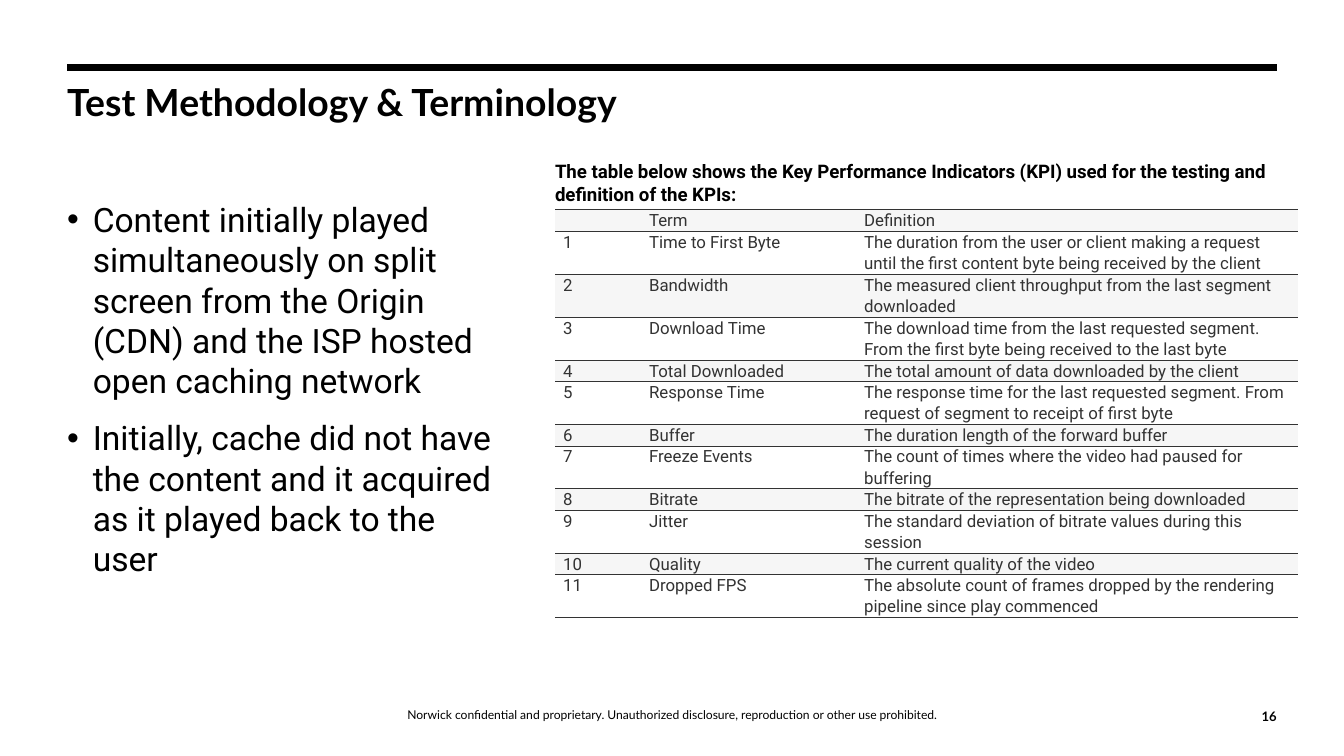
from lxml import etree
from pptx import Presentation, util as u
from pptx.dml.color import RGBColor
from pptx.enum import shapes, text
from pptx.oxml import ns

COLORS = {"ink": "000000", "cell": "333333", "band": "F6F6F6"}
BULLETS = [
    "Content initially played simultaneously on split screen from the Origin (CDN) "
    "and the ISP hosted open caching network",
    "Initially, cache did not have the content and it acquired as it played back to the user",
]
TERMS = [
    ("Time to First Byte", "The duration from the user or client making a request until "
     "the first content byte being received by the client"),
    ("Bandwidth", "The measured client throughput from the last segment downloaded"),
    ("Download Time", "The download time from the last requested segment. "
     "From the first byte being received to the last byte"),
    ("Total Downloaded", "The total amount of data downloaded by the client"),
    ("Response Time", "The response time for the last requested segment. "
     "From request of segment to receipt of first byte"),
    ("Buffer", "The duration length of the forward buffer"),
    ("Freeze Events", "The count of times where the video had paused for buffering"),
    ("Bitrate", "The bitrate of the representation being downloaded"),
    ("Jitter", "The standard deviation of bitrate values during this session"),
    ("Quality", "The current quality of the video"),
    ("Dropped FPS", "The absolute count of frames dropped by the rendering pipeline "
     "since play commenced"),
]


class Deck:
    """Holds the style and the current slide, with a method for each kind of element."""

    heading, body = "Lato", "Roboto"

    def __init__(self, width):
        self.prs = Presentation()
        self.prs.slide_width, self.prs.slide_height = u.Inches(width), u.Inches(width * 9 / 16)
        self.s = self.prs.slides.add_slide(self.prs.slide_layouts[1])

    def color(self, key):
        return RGBColor.from_string(COLORS[key])

    def style(self, p, font, size, bold=False, color="ink"):
        for r in p.runs:
            r.font.name, r.font.size, r.font.bold = font, u.Pt(size), bold
            r.font.color.rgb = self.color(color)

    def frame(self, sp, box, anchor=text.MSO_ANCHOR.TOP):
        sp.left, sp.top, sp.width, sp.height = map(u.Inches, box)
        tf = sp.text_frame
        tf.word_wrap, tf.auto_size = True, text.MSO_AUTO_SIZE.NONE
        tf.vertical_anchor = anchor
        tf.margin_left = tf.margin_top = tf.margin_right = tf.margin_bottom = 0
        return tf

    def title(self, box, words):
        tf = self.frame(self.s.shapes.title, box)
        tf.text = words
        p = tf.paragraphs[0]
        p.alignment, p.line_spacing = text.PP_ALIGN.LEFT, 0.8
        self.style(p, self.heading, 20, True)

    def bullets(self, box, items):
        tf = self.frame(self.s.placeholders[1], box)
        tf.text = "\n".join(items)
        for i, p in enumerate(tf.paragraphs):
            pPr = p._p.get_or_add_pPr()
            pPr.set("marL", str(u.Inches(0.19)))
            pPr.set("indent", str(-u.Inches(0.19)))
            etree.SubElement(pPr, ns.qn("a:buChar"), char="•")
            p.space_before = u.Pt(9 if i else 0)
            self.style(p, self.body, 18)

    def label(self, box, words, font, size, bold=False, align=text.PP_ALIGN.LEFT,
              anchor=text.MSO_ANCHOR.TOP, spacing=None):
        tf = self.frame(self.s.shapes.add_textbox(0, 0, 0, 0), box, anchor)
        tf.text = words
        p = tf.paragraphs[0]
        p.alignment, p.line_spacing = align, spacing
        self.style(p, font, size, bold)

    def rule(self, left, right, y, width):
        ends = map(u.Inches, (left, y, right, y))
        sp = self.s.shapes.add_connector(shapes.MSO_CONNECTOR.STRAIGHT, *ends)
        sp.line.color.rgb, sp.line.width = self.color("ink"), u.Pt(width)
        etree.SubElement(sp._element.spPr, ns.qn("a:effectLst"))

    def borders(self, cell):
        tcPr = cell._tc.get_or_add_tcPr()
        for side in ("lnL", "lnR"):
            ln = etree.SubElement(tcPr, ns.qn(f"a:{side}"))
            etree.SubElement(ln, ns.qn("a:noFill"))
        for side in ("lnT", "lnB"):
            ln = etree.SubElement(tcPr, ns.qn(f"a:{side}"), w=str(u.Pt(0.5)))
            fill = etree.SubElement(ln, ns.qn("a:solidFill"))
            etree.SubElement(fill, ns.qn("a:srgbClr"), val=COLORS["cell"])

    def cell(self, cell, words, banded):
        cell.margin_left = cell.margin_right = u.Inches(0.06)
        cell.margin_top = cell.margin_bottom = 0
        self.borders(cell)
        if banded:
            cell.fill.solid()
            cell.fill.fore_color.rgb = self.color("band")
        else:
            cell.fill.background()
        cell.text = words
        p = cell.text_frame.paragraphs[0]
        p.line_spacing, p.space_after = 1.07, u.Pt(8)
        self.style(p, self.body, 9, color="cell")
        if not words:
            p._p.get_or_add_endParaRPr().set("sz", "900")

    def table(self, left, top, widths, rows):
        heights = [0.32 if len(row[-1]) > 52 else 0.16 for row in rows]
        box = map(u.Inches, (left, top, sum(widths), sum(heights)))
        tbl = self.s.shapes.add_table(len(rows), len(widths), *box).table
        tbl.first_row = tbl.horz_banding = False
        for col, width in zip(tbl.columns, widths):
            col.width = u.Inches(width)
        for i, (row, height) in enumerate(zip(rows, heights)):
            tbl.rows[i].height = u.Inches(height)
            for j, words in enumerate(row):
                self.cell(tbl.cell(i, j), words, i % 2 == 0)


def main():
    deck = Deck(10)
    bottom = text.MSO_ANCHOR.BOTTOM
    deck.label((1.11, 5.04, 7.79, 0.33),
               "Norwick confidential and proprietary. Unauthorized disclosure, "
               "reproduction or other use prohibited.",
               deck.heading, 6.5, align=text.PP_ALIGN.CENTER, anchor=bottom, spacing=u.Pt(7.4))
    deck.rule(0.5, 9.5, 0.5, 3.75)
    deck.bullets((0.5, 1.48, 3.26, 3.38), BULLETS)
    deck.label((9.25, 5.14, 0.25, 0.25), "16", deck.heading, 7, True,
               text.PP_ALIGN.RIGHT, bottom)
    deck.title((0.5, 0.65, 7.75, 0.62), "Test Methodology & Terminology")
    rows = [("", "Term", "Definition")]
    rows += [(str(n), *term) for n, term in enumerate(TERMS, 1)]
    deck.table(4.13, 1.56, (0.64, 1.6, 3.29), rows)
    deck.label((4.13, 1.19, 5.53, 0.37),
               "The table below shows the Key Performance Indicators (KPI) used for "
               "the testing and definition of the KPIs:", deck.body, 10, True)
    deck.prs.save("out.pptx")


if __name__ == "__main__":
    main()
